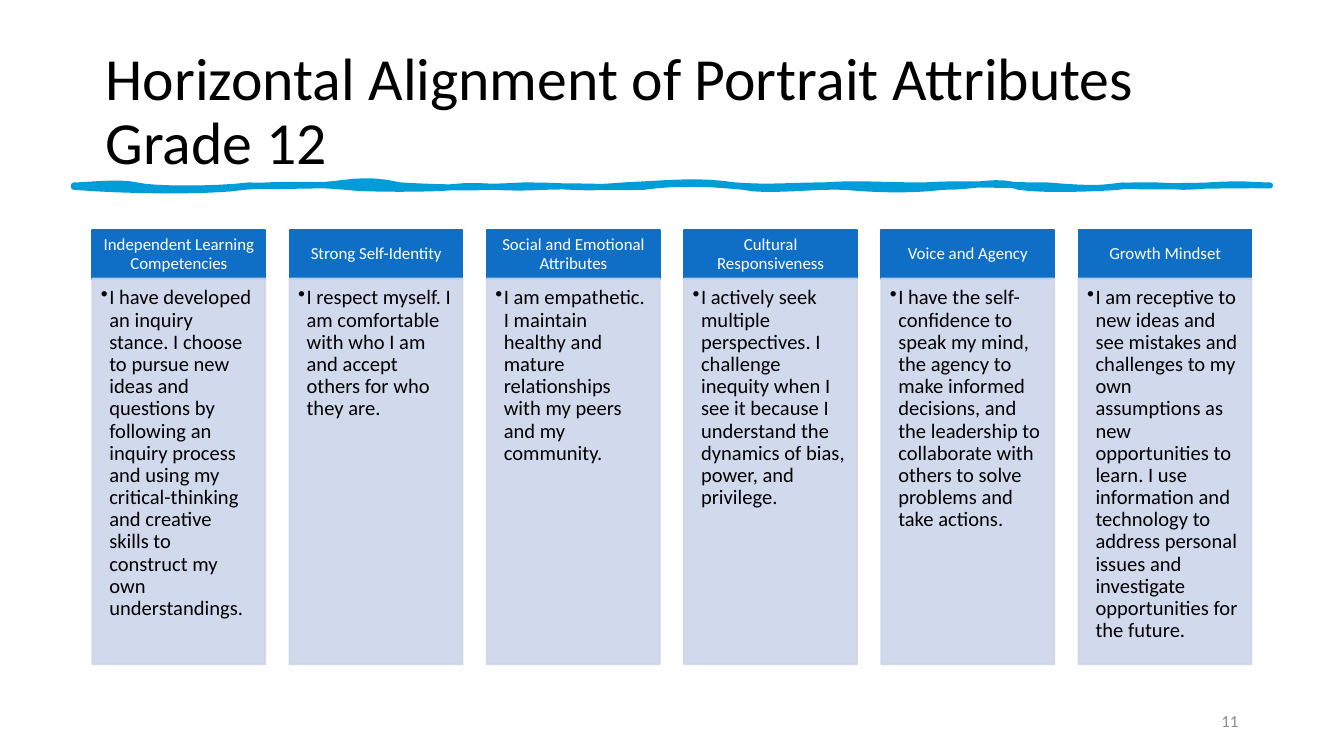
from lxml.etree import SubElement
from pptx import Presentation
from pptx.dml.color import RGBColor
from pptx.enum.shapes import MSO_SHAPE as Shape
from pptx.enum.text import MSO_ANCHOR as Anchor, PP_ALIGN as Align
from pptx.oxml.ns import qn
from pptx.util import Pt

BLACK, WHITE, GRAY = "000000", "FFFFFF", "8C8C8C"
HEADER_BLUE, STROKE_BLUE, PALE_BLUE = "0F6FC6", "009DD9", "CCD5EA"

ATTRIBUTES = [
    ("Independent Learning Competencies",
     "I have developed an inquiry stance. I choose to pursue new ideas and questions by "
     "following an inquiry process and using my critical-thinking and creative skills to "
     "construct my own understandings."),
    ("Strong Self-Identity",
     "I respect myself. I am comfortable with who I am and accept others for who they are."),
    ("Social and Emotional Attributes",
     "I am empathetic. I maintain healthy and mature relationships with my peers and my "
     "community."),
    ("Cultural Responsiveness",
     "I actively seek multiple perspectives. I challenge inequity when I see it because I "
     "understand the dynamics of bias, power, and privilege."),
    ("Voice and Agency",
     "I have the self-confidence to speak my mind, the agency to make informed decisions, "
     "and the leadership to collaborate with others to solve problems and take actions."),
    ("Growth Mindset",
     "I am receptive to new ideas and see mistakes and challenges to my own assumptions as "
     "new opportunities to learn. I use information and technology to address personal "
     "issues and investigate opportunities for the future."),
]

# Each curve: two control points (x, y) and the end x; y is measured from its edge.
TOP_EDGE = [
    (6.5, 0, 24.5, -2.2, 33.8), (42.5, 2.2, 75.6, 2.2, 93.6),
    (113.8, 0.7, 115.9, 0, 128.2), (143.3, 0, 153.4, -5, 175),
    (198.7, 1.4, 213.8, 1.4, 241.2), (270.7, 0, 268.6, 2.2, 294.5),
    (322.6, -1.4, 334.8, -2.9, 354.2), (373, 1.4, 383.8, 0, 401.8),
    (421.9, -1.4, 429.1, 0, 455), (479.5, -1.4, 493.9, 0, 521.3),
    (548.6, 2.2, 550.1, 1.4, 561.6), (576, 1.4, 617.8, -0.7, 640.8),
]
BOTTOM_EDGE = [
    (622.8, -2.9, 604.8, 0, 594), (581.8, -0.7, 568.8, -1.4, 559.4),
    (552.2, 0.7, 519.8, 2.2, 506.2), (495.4, -4.3, 483.8, 0, 465.8),
    (447.1, 2.2, 428.4, 1.4, 412.6), (397.4, -0.7, 370.8, 2.9, 358.6),
    (343.4, -1.4, 326.2, -2.9, 305.3), (284.4, 0.7, 273.6, -0.7, 252),
    (229.7, 1.4, 216.7, -1.4, 205.2), (193, 1.4, 155.5, 1.4, 145.4),
    (131.8, -1.4, 108.7, -1.4, 91.4), (72.7, 2.9, 25.9, 2.2, 0),
]


def color(hex_value):
    return RGBColor.from_string(hex_value)


def paint(shape, hex_value, line_width, opacity=100):
    shape.shadow.inherit = False
    shape.line.width = Pt(line_width)
    for fill in (shape.fill, shape.line.fill):
        fill.solid()
        fill.fore_color.rgb = color(hex_value)
    if opacity < 100:
        for tone in shape._element.spPr.iter(qn("a:srgbClr")):
            SubElement(tone, qn("a:alpha"), val=str(opacity * 1000))


def write(shape, text, size, hex_value, align=Align.LEFT, anchor=Anchor.MIDDLE,
          insets=(7.2, 3.6, 7.2, 3.6), spacing=0.9):
    """Fill the shape with one paragraph; insets are left, top, right, bottom."""
    frame = shape.text_frame
    sides = ("margin_left", "margin_top", "margin_right", "margin_bottom")
    layout = {"word_wrap": True, "vertical_anchor": anchor}
    layout.update((side, Pt(inset)) for side, inset in zip(sides, insets))
    for name, value in layout.items():
        setattr(frame, name, value)
    para = frame.paragraphs[0]
    para.text = text
    para.alignment = align
    para.line_spacing = spacing
    for span in para.runs:
        for name, value in {"name": "Calibri", "size": Pt(size)}.items():
            setattr(span.font, name, value)
        span.font.color.rgb = color(hex_value)
    return para


def add_bullet(para, indent):
    props = para._p.get_or_add_pPr()
    props.set("marL", str(Pt(indent)))
    props.set("indent", str(-Pt(indent)))
    SubElement(props, qn("a:buChar"), char="•")


def add_text_box(page, box, *args, **formats):
    write(page.shapes.add_textbox(*map(Pt, box)), *args, **formats)


def add_block(page, box, hex_value, opacity=100):
    block = page.shapes.add_shape(Shape.RECTANGLE, *map(Pt, box))
    paint(block, hex_value, 1, opacity)
    return block


def trace(start_x, base, curves, steps=8):
    """Points along a chain of cubic curves whose ends all lie at height base."""
    points = []
    for x1, y1, x2, y2, end_x in curves:
        for step in range(1, steps + 1):
            t = step / steps
            s = 1 - t
            a, b = 3 * s * s * t, 3 * s * t * t
            points.append((s**3 * start_x + a * x1 + b * x2 + t**3 * end_x,
                           base + a * y1 + b * y2))
        start_x = end_x
    return points


def add_brush_stroke(page, left, top, thickness):
    width = TOP_EDGE[-1][-1]
    outline = trace(0, 0, TOP_EDGE) + trace(width, thickness, BOTTOM_EDGE)
    builder = page.shapes.build_freeform(Pt(left), Pt(top))
    builder.add_line_segments([(Pt(left + x), Pt(top + y)) for x, y in outline])
    paint(builder.convert_to_shape(), STROKE_BLUE, 3.25)


def add_attribute_column(page, box, heading, statement, header_height=26):
    left, top, width, height = box
    header = add_block(page, (left, top, width, header_height), HEADER_BLUE)
    write(header, heading, 9, WHITE, align=Align.CENTER, insets=(4.6, 2.6, 4.6, 2.6))
    body = add_block(page, (left, top + header_height, width, height - header_height),
                     PALE_BLUE, opacity=90)
    para = write(body, statement, 11, BLACK, anchor=Anchor.TOP,
                 insets=(4.6, 4.6, 6.1, 6.9))
    add_bullet(para, 4.5)


def add_attribute_columns(page, box, gap_ratio=0.14):
    left, top, total, height = box
    count = len(ATTRIBUTES)
    width = total / (count + (count - 1) * gap_ratio)
    for index, (heading, statement) in enumerate(ATTRIBUTES):
        column_left = left + index * width * (1 + gap_ratio)
        add_attribute_column(page, (column_left, top, width, height), heading, statement)


def main():
    deck = Presentation()
    deck.slide_width, deck.slide_height = Pt(720), Pt(405)
    page = deck.slides.add_slide(deck.slide_layouts[6])
    add_text_box(page, (49.5, 21.6, 621, 78.3),
                 "Horizontal Alignment of Portrait Attributes\vGrade 12", 32, BLACK)
    add_brush_stroke(page, 39.6, 99.4, 0.7)
    add_text_box(page, (508.5, 375.4, 162, 21.6), "11", 9, GRAY,
                 align=Align.RIGHT, spacing=1)
    add_attribute_columns(page, (49.5, 123.3, 621, 232.6))
    deck.save("out.pptx")


if __name__ == "__main__":
    main()
